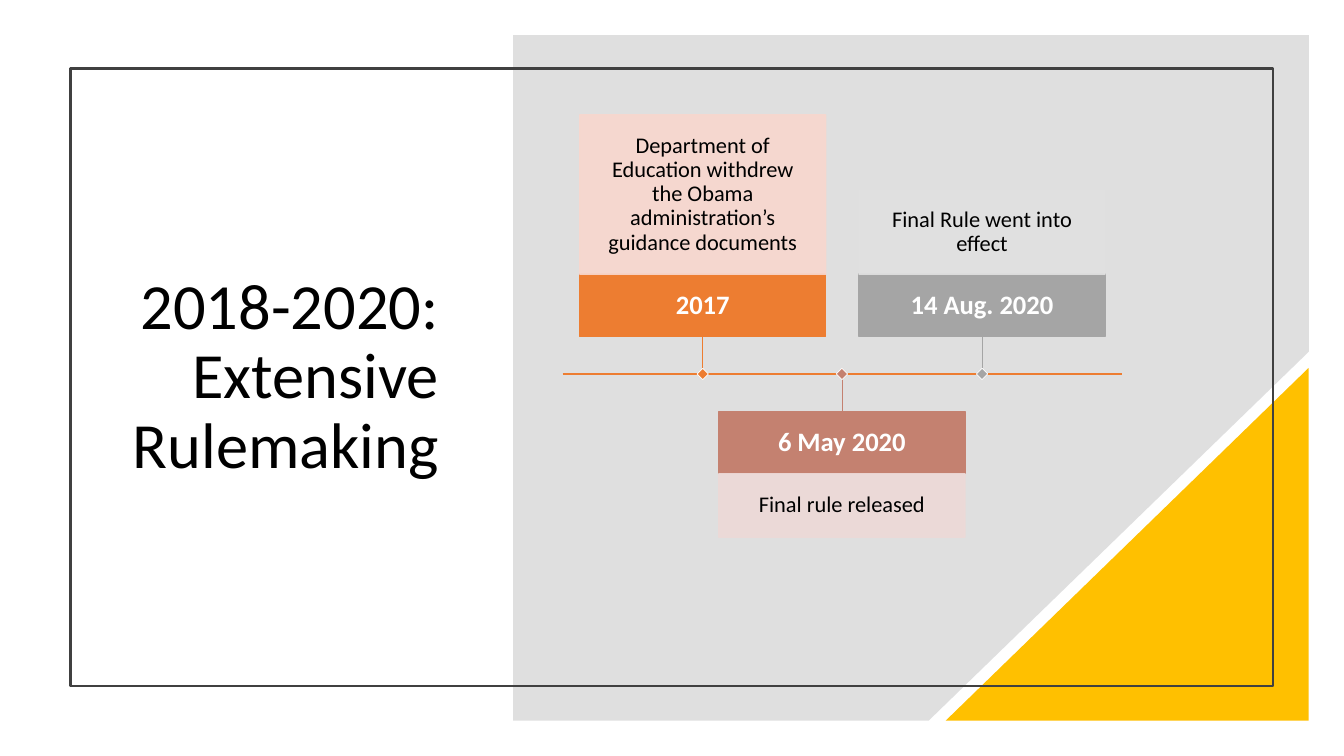
from dataclasses import dataclass

from pptx import Presentation
from pptx.dml.color import RGBColor
from pptx.enum.shapes import MSO_CONNECTOR, MSO_SHAPE
from pptx.enum.text import MSO_ANCHOR, MSO_AUTO_SIZE, PP_ALIGN
from pptx.oxml.ns import qn
from pptx.util import Pt

PX = 9144
RECT = MSO_SHAPE.RECTANGLE
WEDGE = MSO_SHAPE.RIGHT_TRIANGLE
LINE = MSO_CONNECTOR.STRAIGHT
MIDDLE = MSO_ANCHOR.MIDDLE
FIXED = MSO_AUTO_SIZE.NONE
CENTER, RIGHT = PP_ALIGN.CENTER, PP_ALIGN.RIGHT


@dataclass(frozen=True)
class Theme:
    """Colours, font and type sizes of the slide."""
    font: str = "Calibri"
    ink: str = "000000"
    white: str = "FFFFFF"
    panel: str = "808080"
    gold: str = "FFC000"
    frame: str = "404040"
    orange: str = "ED7D31"
    peach: str = "F8D7CE"
    clay: str = "C48170"
    blush: str = "EDD9D7"
    gray: str = "A5A5A5"
    pale: str = "E1E1E1"
    title: int = 46
    date: int = 19
    note: int = 16


THEME = Theme()
EVENTS = [
    ("2017", "Department of Education withdrew the Obama administration’s guidance documents",
     158, THEME.orange, THEME.peach),
    ("6 May 2020", "Final rule released", 63, THEME.clay, THEME.blush),
    ("14 Aug. 2020", "Final Rule went into effect", 83, THEME.gray, THEME.pale),
]


def px(*nums):
    """Turn px lengths into EMU."""
    return [round(num * PX) for num in nums]


def rgb(code):
    """Read a hex colour."""
    return RGBColor.from_string(code)


def paint(shape, fill=None, line=None, width=1, alpha=100):
    """Set fill, line and opacity, and drop the shadow."""
    shape.shadow.inherit = False
    if fill:
        shape.fill.solid()
        shape.fill.fore_color.rgb = rgb(fill)
    else:
        shape.fill.background()
    if line:
        shape.line.color.rgb = rgb(line)
        shape.line.width = Pt(width)
    else:
        shape.line.fill.background()
    if alpha < 100:
        for color in shape.element.spPr.iter(qn("a:srgbClr")):
            color.makeelement(qn("a:alpha"))
            node = color.makeelement(qn("a:alpha"), {"val": str(alpha * 1000)})
            color.append(node)


def block(slide, kind, box, **look):
    """Add a painted preset shape."""
    shape = slide.shapes.add_shape(kind, *px(*box))
    paint(shape, **look)
    return shape


def rule(slide, ends, color, width):
    """Add a straight line without a shadow."""
    line = slide.shapes.add_connector(LINE, *px(*ends))
    line.line.color.rgb = rgb(color)
    line.line.width = Pt(width)
    props = line.element.spPr
    props.append(props.makeelement(qn("a:effectLst")))
    return line


def write(shape, text, size, color, align=CENTER, bold=False, inset=10):
    """Write one formatted run into a shape."""
    frame = shape.text_frame
    frame.word_wrap = True
    frame.auto_size = FIXED
    frame.vertical_anchor = MIDDLE
    pad = px(inset)[0]
    frame.margin_left = frame.margin_right = pad
    frame.margin_top = frame.margin_bottom = pad
    para = frame.paragraphs[0]
    para.alignment = align
    para.line_spacing = 0.9
    run = para.add_run()
    run.text = text
    run.font.name = THEME.font
    run.font.size = Pt(size)
    run.font.bold = bold
    run.font.color.rgb = rgb(color)


def heading(slide, box):
    """Place the slide title."""
    title = slide.shapes.title
    title.left, title.top, title.width, title.height = px(*box)
    write(title, "2018-2020: Extensive Rulemaking", THEME.title, THEME.ink, RIGHT)


def backdrop(slide, box):
    """Draw the cut panel and the gold corner."""
    left, top, wide, high = box
    right, base = left + wide, top + high
    path = slide.shapes.build_freeform(left, top, scale=PX)
    path.add_line_segments([(right, top), (right, top + 314),
                            (left + 412, base), (left, base)])
    paint(path.convert_to_shape(), fill=THEME.panel, alpha=25)
    corner = block(slide, WEDGE, (right - 360, base - 350, 360, 350), fill=THEME.gold)
    flip = corner.element.spPr.find(qn("a:xfrm"))
    flip.set("flipH", "1")


def event(slide, box, above, data):
    """Draw one event and its stem; the box spans the date bar to the axis."""
    date, note, tall, dark, light = data
    left, top, wide, high = box
    bar = 62
    axis = top + high if above else top
    head = top if above else top + high - bar
    card = head - tall if above else head + bar
    mid = left + wide / 2
    label = block(slide, RECT, (left, head, wide, bar), fill=dark, line=dark)
    write(label, date, THEME.date, THEME.white, bold=True, inset=11)
    body = block(slide, RECT, (left, card, wide, tall), fill=light, line=light, alpha=90)
    write(body, note, THEME.note, THEME.ink, inset=17)
    stem = rule(slide, (mid, head, mid, axis), dark, 0.5)
    stem.begin_connect(label, 2 if above else 0)
    mark = block(slide, RECT, (mid - 4, axis - 4, 8, 8),
                 fill=dark, line=THEME.white, width=0.5)
    mark.rotation = 45


def timeline(slide, box):
    """Draw the axis and alternate events above and below it."""
    left, top, wide, high = box
    axis = top + high // 2
    rule(slide, (left, axis, left + wide, axis), THEME.orange, 1)
    for i, data in enumerate(EVENTS):
        above = i % 2 == 0
        start = top if above else axis
        spot = (left + 17 + 277 * i // 2, start, 244, high // 2)
        event(slide, spot, above, data)


def main():
    """Build and save the slide."""
    deck = Presentation()
    deck.slide_width, deck.slide_height = px(1333, 750)
    slide = deck.slides.add_slide(deck.slide_layouts[5])
    heading(slide, (110, 130, 335, 490))
    backdrop(slide, (509, 35, 789, 680))
    block(slide, RECT, (70, 68, 1193, 613), line=THEME.frame, width=1.5)
    timeline(slide, (558, 272, 555, 198))
    deck.save("out.pptx")


if __name__ == "__main__":
    main()
